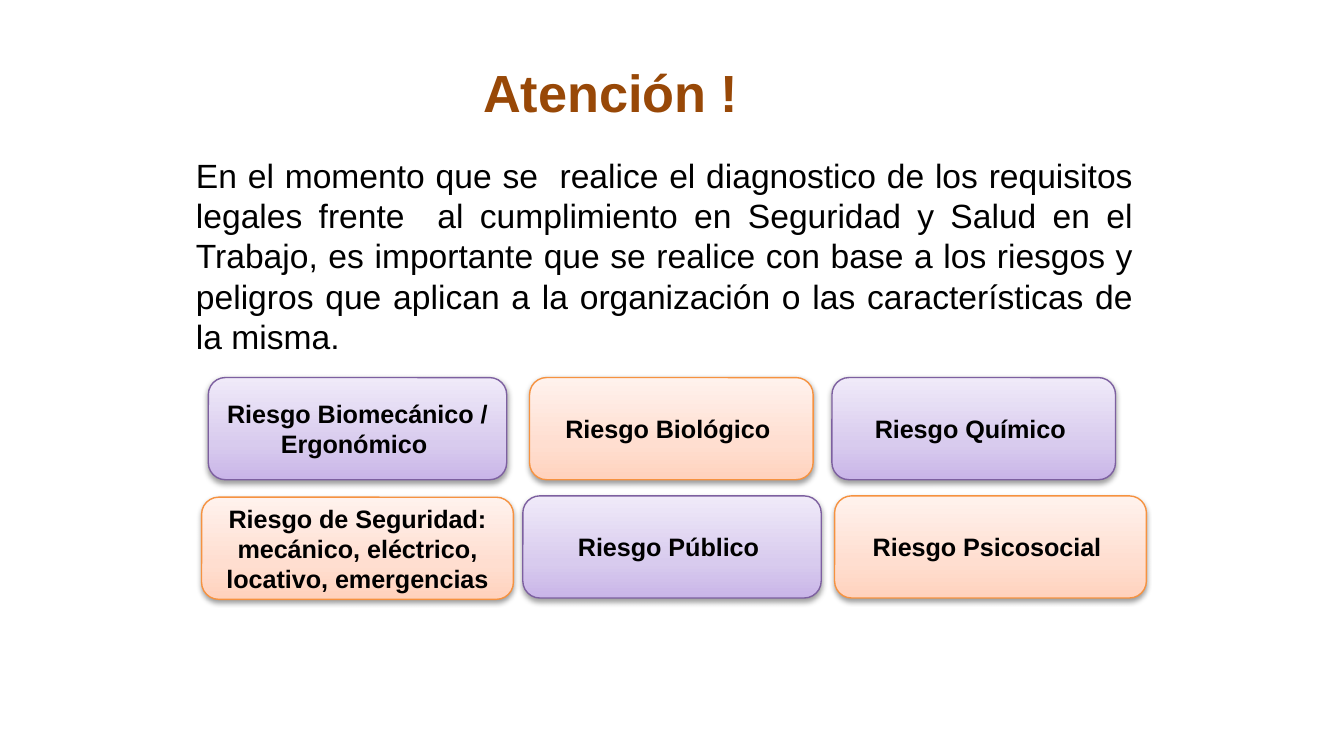
from copy import deepcopy
from dataclasses import dataclass

from pptx import Presentation
from pptx.dml.color import RGBColor
from pptx.enum.shapes import MSO_SHAPE as Shape
from pptx.enum.text import MSO_ANCHOR as Anchor, PP_ALIGN as Align
from pptx.oxml import parse_xml
from pptx.oxml.ns import nsdecls, qn
from pptx.util import Inches, Pt

COLORS = {"text": "000000", "title": "984807", "shadow": "000000"}
FONT = "Arial"
PAGE_WIDTH = 10
PAGE_HEIGHT = PAGE_WIDTH * 9 / 16
CARD_HEIGHT = 0.76
STOP_POSITIONS = (0, 0.35, 1)


@dataclass(frozen=True)
class Style:
    stops: tuple[str, str, str]
    line: str


@dataclass(frozen=True)
class Card:
    text: str
    left: float
    top: float
    width: float
    style: Style


PURPLE = Style(("C9B5E8", "D8CBEE", "F0EAF9"), "7D60A0")
ORANGE = Style(("FFD2BD", "FFDED0", "FFF2ED"), "F69240")

CARDS = (
    Card("Riesgo Biomecánico / Ergonómico ", 1.55, 2.81, 2.22, PURPLE),
    Card("Riesgo Biológico ", 3.94, 2.81, 2.11, ORANGE),
    Card("Riesgo Químico ", 6.19, 2.81, 2.11, PURPLE),
    Card("Riesgo de Seguridad: mecánico, eléctrico, locativo, emergencias",
         1.5, 3.7, 2.32, ORANGE),
    Card("Riesgo Público ", 3.89, 3.69, 2.22, PURPLE),
    Card("Riesgo Psicosocial ", 6.21, 3.69, 2.32, ORANGE),
)


def write(shape, text: str, size: float, color: str, align, bold: bool) -> None:
    frame = shape.text_frame
    frame.word_wrap = True
    para = frame.paragraphs[0]
    para.text = text
    para.alignment = align
    para.font.name = FONT
    para.font.size = Pt(size)
    para.font.bold = bold
    para.font.color.rgb = RGBColor.from_string(color)


def add_text(page, area: tuple[float, float, float, float], text: str,
             size: float, color: str, align, bold: bool = False) -> None:
    box = page.shapes.add_textbox(*map(Inches, area))
    write(box, text, size, color, align, bold)


def fill_gradient(shape, stops: tuple[str, str, str]) -> None:
    shape.fill.gradient()
    shape.fill.gradient_angle = 90
    stop_list = shape._element.spPr.find(qn("a:gradFill")).find(qn("a:gsLst"))
    stop_list.append(deepcopy(stop_list[-1]))
    for stop, color, position in zip(shape.fill.gradient_stops, stops, STOP_POSITIONS):
        stop.color.rgb = RGBColor.from_string(color)
        stop.position = position


def add_shadow(shape) -> None:
    shape.shadow.inherit = False
    effects = shape._element.spPr.find(qn("a:effectLst"))
    effects.append(parse_xml(
        f'<a:outerShdw {nsdecls("a")} blurRad="{Pt(3.1)}" dist="{Pt(1.6)}" '
        f'dir="5400000" rotWithShape="0"><a:srgbClr val="{COLORS["shadow"]}">'
        '<a:alpha val="38000"/></a:srgbClr></a:outerShdw>'))


def add_card(page, card: Card) -> None:
    shape = page.shapes.add_shape(
        Shape.ROUNDED_RECTANGLE, Inches(card.left), Inches(card.top),
        Inches(card.width), Inches(CARD_HEIGHT))
    fill_gradient(shape, card.style.stops)
    shape.line.color.rgb = RGBColor.from_string(card.style.line)
    shape.line.width = Pt(0.75)
    add_shadow(shape)
    shape.text_frame.vertical_anchor = Anchor.MIDDLE
    write(shape, card.text, 13.5, COLORS["text"], Align.CENTER, True)


def main() -> None:
    deck = Presentation()
    deck.slide_width = Inches(PAGE_WIDTH)
    deck.slide_height = Inches(PAGE_HEIGHT)
    page = deck.slides.add_slide(deck.slide_layouts[6])
    add_text(page, (1.36, 1.1, 7.17, 1.62),
             "En el momento que se  realice el diagnostico de los requisitos legales "
             "frente  al cumplimiento en Seguridad y Salud en el Trabajo, es importante "
             "que se realice con base a los riesgos y peligros que aplican a la "
             "organización o las características de la misma.",
             18, COLORS["text"], Align.JUSTIFY)
    add_text(page, (2.66, 0.4, 3.77, 0.57), "Atención !",
             28, COLORS["title"], Align.CENTER, True)
    for card in CARDS:
        add_card(page, card)
    deck.save("out.pptx")


if __name__ == "__main__":
    main()
